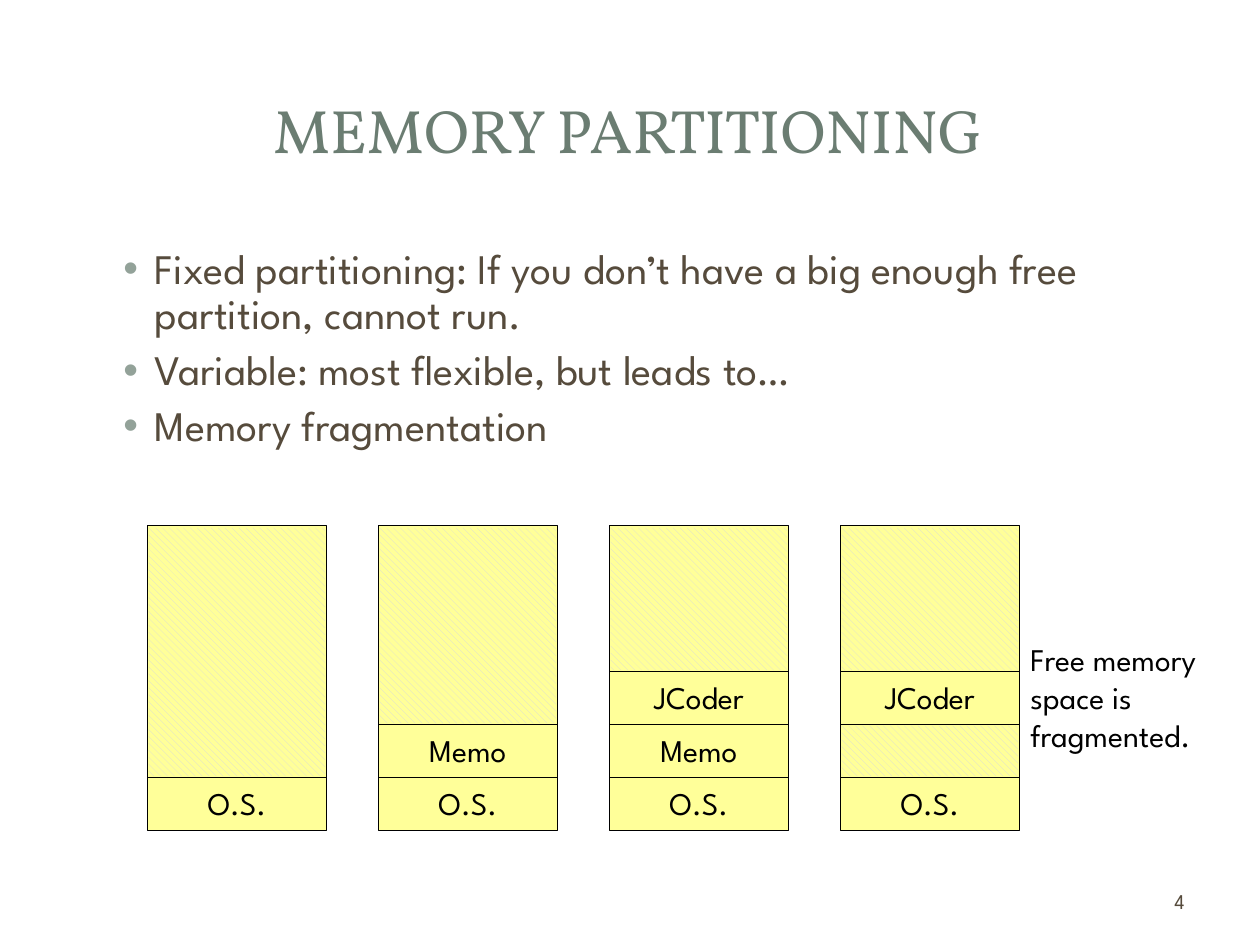
from pptx import Presentation
from pptx.dml.color import RGBColor
from pptx.enum.dml import MSO_PATTERN
from pptx.enum.shapes import MSO_CONNECTOR, MSO_SHAPE
from pptx.enum.text import MSO_ANCHOR, MSO_AUTO_SIZE, PP_ALIGN
from pptx.oxml import parse_xml
from pptx.oxml.ns import nsdecls
from pptx.util import Inches, Pt


def color(hex_code):
    return RGBColor.from_string(hex_code)


class MemorySlide:
    heading_font = "Vollkorn"
    body_font = "League Spartan"
    heading_color = "6B7D72"
    body_color = "564B3C"
    bullet_color = "93A299"
    ink = "000000"
    memory_fill = "FFFF99"
    hatch = "D9D9D9"

    def __init__(self, slide):
        self.slide = slide

    def place(self, item, left, top, width, height):
        item.left, item.top = Inches(left), Inches(top)
        item.width, item.height = Inches(width), Inches(height)

    def add_text_run(self, paragraph, text, size, hex_code, font=None):
        run = paragraph.add_run()
        run.text = text
        run.font.name = font or self.body_font
        run.font.size = Pt(size)
        run.font.color.rgb = color(hex_code)

    def title(self, text, box):
        heading = self.slide.shapes.title
        self.place(heading, *box)
        frame = heading.text_frame
        frame.auto_size = MSO_AUTO_SIZE.NONE
        frame.vertical_anchor = MSO_ANCHOR.MIDDLE
        paragraph = frame.paragraphs[0]
        paragraph.alignment = PP_ALIGN.CENTER
        self.add_text_run(paragraph, text, 35, self.heading_color, self.heading_font)

    def bullets(self, points, box):
        body = self.slide.placeholders[1]
        self.place(body, *box)
        frame = body.text_frame
        frame.auto_size = MSO_AUTO_SIZE.NONE
        for index, point in enumerate(points):
            paragraph = frame.add_paragraph() if index else frame.paragraphs[0]
            properties = paragraph._p.get_or_add_pPr()
            properties.set("marL", str(Inches(0.38)))
            properties.set("indent", str(Inches(-0.25)))
            for markup in (
                f'<a:buClr {nsdecls("a")}><a:srgbClr val="{self.bullet_color}"/></a:buClr>',
                f'<a:buFont {nsdecls("a")} typeface="Arial"/>',
                f'<a:buChar {nsdecls("a")} char="•"/>',
            ):
                properties.append(parse_xml(markup))
            paragraph.line_spacing = 0.9
            paragraph.space_before = Pt(6)
            self.add_text_run(paragraph, point, 24, self.body_color)

    def text(self, text, box, size=18, hex_code=ink, align=PP_ALIGN.LEFT,
             anchor=MSO_ANCHOR.TOP, shapes=None):
        label = (shapes or self.slide.shapes).add_textbox(*map(Inches, box))
        frame = label.text_frame
        frame.word_wrap = True
        frame.vertical_anchor = anchor
        paragraph = frame.paragraphs[0]
        paragraph.alignment = align
        self.add_text_run(paragraph, text, size, hex_code)

    def rectangle(self, shapes, box):
        area = shapes.add_shape(MSO_SHAPE.RECTANGLE, *map(Inches, box))
        area.shadow.inherit = False
        return area

    def memory(self, shapes, box):
        area = self.rectangle(shapes, box)
        area.fill.solid()
        area.fill.fore_color.rgb = color(self.memory_fill)
        area.line.color.rgb = color(self.ink)
        area.line.width = Pt(0.75)

    def free_space(self, shapes, box):
        area = self.rectangle(shapes, box)
        area.fill.patterned()
        area.fill.pattern = MSO_PATTERN.WIDE_DOWNWARD_DIAGONAL
        area.fill.fore_color.rgb = color(self.hatch)
        area.fill.back_color.rgb = color(self.memory_fill)
        area.line.fill.background()

    def divider(self, shapes, left, top, width):
        line = shapes.add_connector(
            MSO_CONNECTOR.STRAIGHT, Inches(left), Inches(top),
            Inches(left + width), Inches(top))
        line.line.color.rgb = color(self.ink)
        line.line.width = Pt(0.75)
        line._element.spPr.append(parse_xml(f'<a:effectLst {nsdecls("a")}/>'))

    def partitioned_memory(self, left, programs):
        top, width, height, step, gap = 4.17, 1.42, 2.42, 0.42, 0.01
        shapes = self.slide.shapes.add_group_shape().shapes
        self.memory(shapes, (left, top, width, height))
        level = top + height
        for program in programs:
            level -= step
            if program:
                self.text(program, (left, level, width, 0.4),
                          align=PP_ALIGN.CENTER, shapes=shapes)
            else:
                self.free_space(shapes, (left + gap, level + gap, width - 2 * gap, step - 2 * gap))
            self.divider(shapes, left, level, width)
        self.free_space(shapes, (left + gap, top + 2 * gap, width - 2 * gap, level - top - 3 * gap))


def main():
    presentation = Presentation()
    presentation.slide_width = Inches(10)
    presentation.slide_height = Inches(7.5)
    page = MemorySlide(presentation.slides.add_slide(presentation.slide_layouts[1]))

    page.title("MEMORY PARTITIONING", (0.47, 0.45, 9.03, 1.14))
    page.bullets([
        "Fixed partitioning: If you don’t have a big enough free partition, cannot run.",
        "Variable: most flexible, but leads to…",
        "Memory fragmentation",
    ], (0.75, 1.92, 8.67, 4.75))
    page.text("4", (7.17, 6.95, 2.33, 0.4), size=12, hex_code=page.body_color,
              align=PP_ALIGN.RIGHT, anchor=MSO_ANCHOR.MIDDLE)

    stages = [
        ["O.S."],
        ["O.S.", "Memo"],
        ["O.S.", "Memo", "JCoder"],
        ["O.S.", None, "JCoder"],
    ]
    for index, programs in enumerate(stages):
        page.partitioned_memory(1.17 + index * 5.5 / 3, programs)
    page.text("Free memory space is fragmented.", (8.08, 5.03, 1.83, 1.01))

    presentation.save("out.pptx")


if __name__ == "__main__":
    main()
